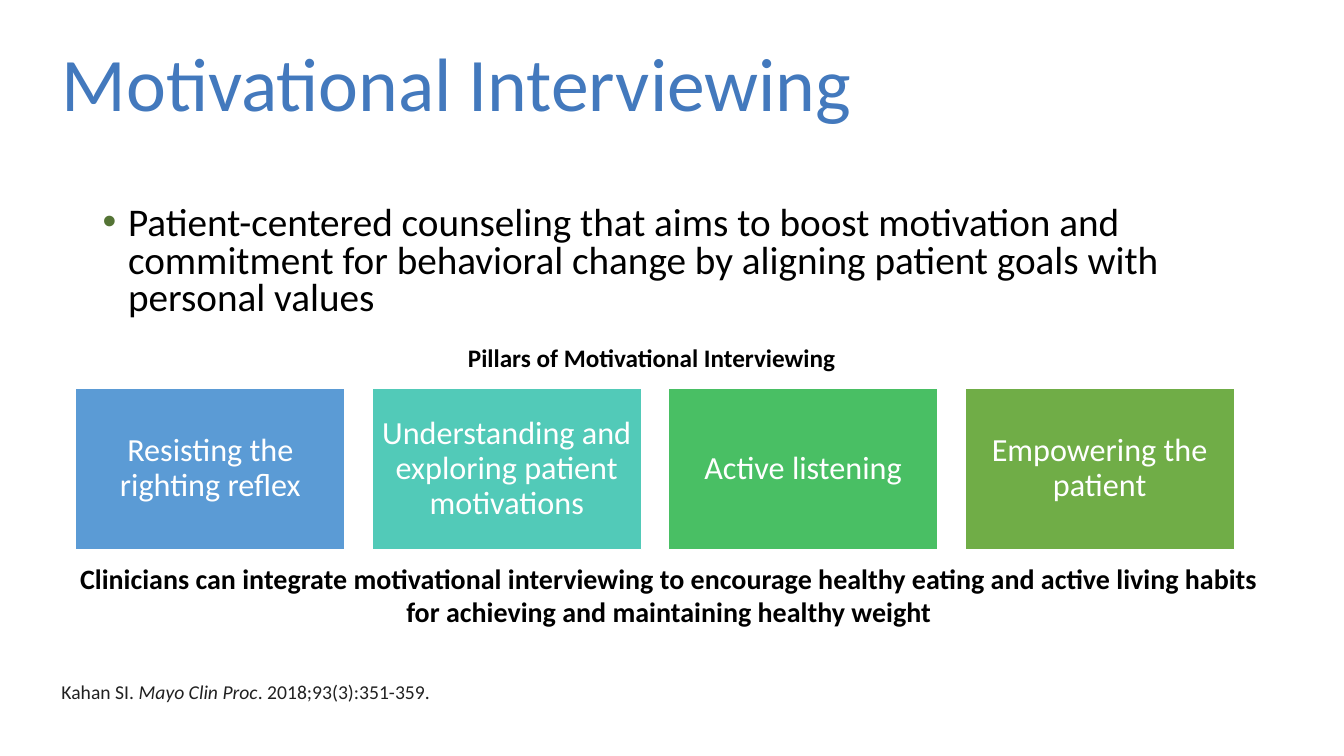
"""Build the Motivational Interviewing slide."""
import pptx
import pptx.util
import pptx.dml.color
import pptx.enum.shapes
import pptx.enum.text
import lxml.etree
import pptx.oxml.ns

Cm = pptx.util.Cm
ALIGN = pptx.enum.text.PP_ALIGN
ANCHOR = pptx.enum.text.MSO_ANCHOR
COLORS = {
    "title": "4379BD",
    "text": "000000",
    "bullet": "547435",
    "citation": "212121",
    "white": "FFFFFF",
    "blue": "5B9BD5",
    "teal": "52CAB8",
    "green": "49BF64",
    "olive": "70AD47",
}


def rgb(name):
    return pptx.dml.color.RGBColor.from_string(COLORS[name])


def write(box, *texts, size, color="text", bold=False, align=ALIGN.LEFT,
          anchor=ANCHOR.TOP, spacing=1.0, italic=(), bullet=None):
    """Write the texts as spans of one paragraph; italic lists span indexes."""
    frame = box.text_frame
    frame.word_wrap = True
    frame.auto_size = pptx.enum.text.MSO_AUTO_SIZE.NONE
    frame.vertical_anchor = anchor
    para = frame.paragraphs[0]
    if bullet:
        properties = para._p.get_or_add_pPr()
        properties.set("marL", str(Cm(0.64)))
        properties.set("indent", str(-Cm(0.64)))
        tag = pptx.oxml.ns.qn
        shade = lxml.etree.SubElement(properties, tag("a:buClr"))
        lxml.etree.SubElement(shade, tag("a:srgbClr"), val=COLORS["bullet"])
        lxml.etree.SubElement(properties, tag("a:buFont"), typeface="Arial")
        lxml.etree.SubElement(properties, tag("a:buChar"), char=bullet)
    para.alignment = align
    para.line_spacing = spacing
    for index, text in enumerate(texts):
        span = para.add_run()
        span.text = text
        span.font.name = "Calibri"
        span.font.size = pptx.util.Pt(size)
        span.font.bold = bold
        span.font.italic = index in italic
        span.font.color.rgb = rgb(color)


deck = pptx.Presentation()
deck.slide_width, deck.slide_height = Cm(33.87), Cm(19.05)
page = deck.slides.add_slide(deck.slide_layouts[5])

title = page.shapes.title
title.left, title.top, title.width, title.height = Cm(1.3), Cm(0.36), Cm(29.21), Cm(3.68)
write(title, "Motivational Interviewing", size=54, color="title",
      anchor=ANCHOR.MIDDLE, spacing=0.9)

definition = page.shapes.add_textbox(Cm(2.34), Cm(5.08), Cm(29.21), Cm(3.45))
write(definition, "Patient-centered counseling that aims to boost motivation and commitment "
      "for behavioral change by aligning patient goals with personal values",
      size=28, spacing=0.8, bullet="•")

citation = page.shapes.add_textbox(Cm(1.3), Cm(17.02), Cm(16.92), Cm(0.86))
write(citation, "Kahan SI. ", "Mayo Clin Proc", ". 2018;93(3):351-359.",
      size=14, color="citation", italic=(1,))

pillars = [
    ("Resisting the righting reflex", "blue"),
    ("Understanding and exploring patient motivations", "teal"),
    ("Active listening", "green"),
    ("Empowering the patient", "olive"),
]
for index, (label, color) in enumerate(pillars):
    pillar = page.shapes.add_shape(pptx.enum.shapes.MSO_SHAPE.RECTANGLE,
                                   Cm(1.91 + 7.47 * index), Cm(9.78), Cm(6.79), Cm(4.07))
    pillar.shadow.inherit = False
    pillar.fill.solid()
    pillar.fill.fore_color.rgb = rgb(color)
    pillar.line.color.rgb = rgb("white")
    pillar.line.width = pptx.util.Pt(1)
    frame = pillar.text_frame
    frame.margin_left = frame.margin_right = Cm(0.24)
    frame.margin_top = frame.margin_bottom = Cm(0.24)
    write(pillar, label, size=23, color="white", align=ALIGN.CENTER,
          anchor=ANCHOR.MIDDLE, spacing=0.9)

summary = page.shapes.add_textbox(Cm(1.73), Cm(14.02), Cm(30.25), Cm(1.96))
write(summary, "Clinicians can integrate motivational interviewing to encourage healthy eating "
      "and active living habits for achieving and maintaining healthy weight",
      size=20, bold=True, align=ALIGN.CENTER)

heading = page.shapes.add_textbox(Cm(1.3), Cm(8.51), Cm(30.25), Cm(1.02))
write(heading, "Pillars of Motivational Interviewing", size=18, bold=True, align=ALIGN.CENTER)

deck.save("out.pptx")
